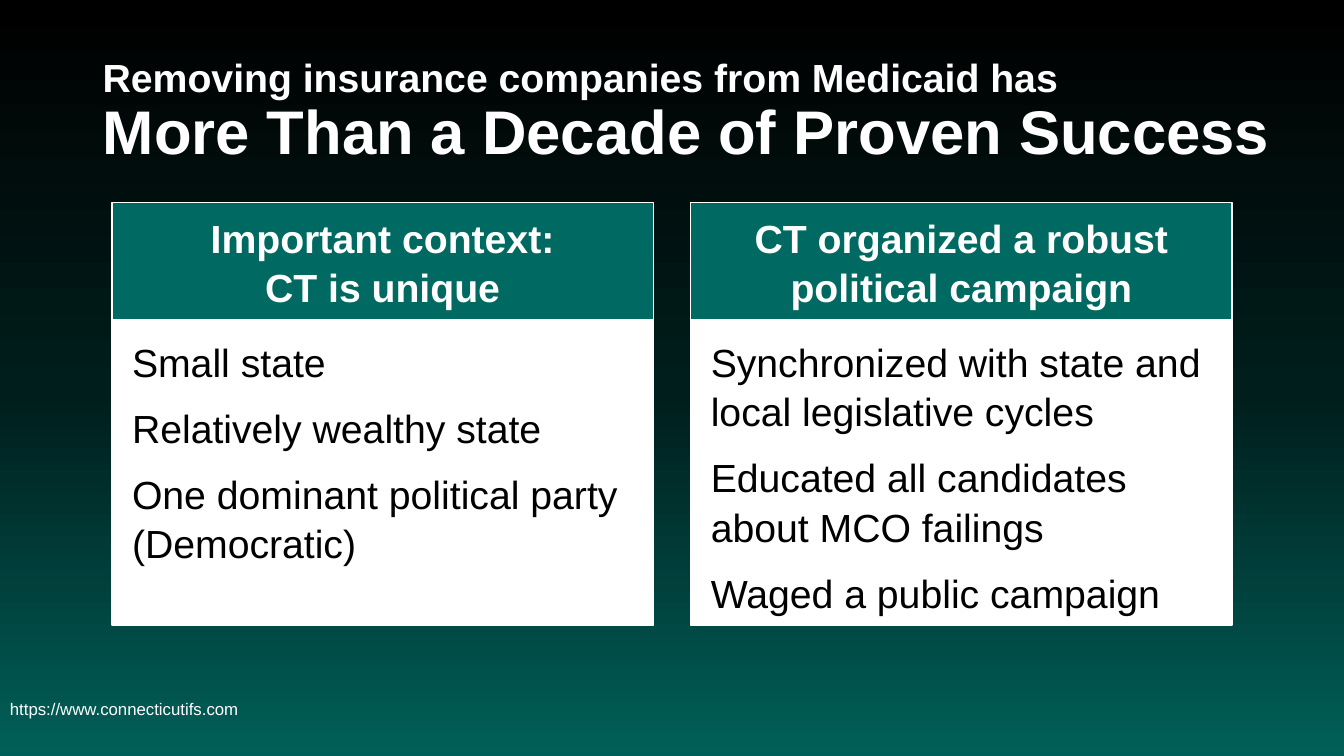
from copy import deepcopy
from dataclasses import dataclass
from typing import Any

from pptx import Presentation
from pptx.dml.color import RGBColor
from pptx.enum.shapes import MSO_SHAPE as SHAPE
from pptx.enum.text import MSO_ANCHOR as ANCHOR, PP_ALIGN as ALIGN
from pptx.oxml.ns import qn
from pptx.util import Inches, Pt

WHITE, BLACK, TEAL = "FFFFFF", "000000", "006961"
GRADIENT = [(0, BLACK), (0.52, "001E1C"), (1, "006059")]
LEFT, TOP, WIDTH, GAP = 1.11, 2.01, 5.37, 0.37
HEAD_H, BODY_H = 1.16, 3.03


@dataclass
class Line:
    text: str
    size: float = 28
    bold: bool = False
    color: str = WHITE


@dataclass
class Card:
    heading: list[str]
    points: list[str]


CARDS = [
    Card(["Important context:", "CT is unique"],
         ["Small state", "Relatively wealthy state",
          "One dominant political party (Democratic)"]),
    Card(["CT organized a robust political campaign"],
         ["Synchronized with state and local legislative cycles",
          "Educated all candidates about MCO failings",
          "Waged a public campaign"]),
]
TITLE = [Line("Removing insurance companies from Medicaid has", 28, True),
         Line("More Than a Decade of Proven Success", 44, True)]
PLAIN_FRAME = {"word_wrap": True, "vertical_anchor": ANCHOR.MIDDLE}
HEAD_FRAME = PLAIN_FRAME | {
    "margin_left": Inches(0.22), "margin_right": Inches(0.22),
    "margin_top": Inches(0.12), "margin_bottom": Inches(0.12)}
BODY_FRAME = {
    "word_wrap": True, "vertical_anchor": ANCHOR.TOP,
    "margin_left": Inches(0.2), "margin_right": Inches(0.22),
    "margin_top": Inches(0.16), "margin_bottom": Inches(0.24)}
PLAIN_PARA = {"alignment": ALIGN.LEFT, "line_spacing": 0.9}
HEAD_PARA = {"alignment": ALIGN.CENTER, "line_spacing": 1.05, "space_after": Pt(0.2)}
BODY_PARA = {"alignment": ALIGN.LEFT, "line_spacing": 1.05, "space_after": Pt(12)}


def rgb(color: str) -> RGBColor:
    return RGBColor.from_string(color)


def apply(target: Any, values: dict[str, Any]) -> None:
    for name, value in values.items():
        setattr(target, name, value)


def add_run(p: Any, line: Line) -> None:
    r = p.add_run()
    r.text = line.text
    apply(r.font, {"name": "Arial", "size": Pt(line.size), "bold": line.bold})
    r.font.color.rgb = rgb(line.color)


def write(sp: Any, paras: list[list[Line]], frame: dict[str, Any],
          para: dict[str, Any]) -> None:
    tf = sp.text_frame
    apply(tf, frame)
    for i, lines in enumerate(paras):
        p = tf.add_paragraph() if i else tf.paragraphs[0]
        apply(p, para)
        for j, line in enumerate(lines):
            if j:
                p.add_line_break()
            add_run(p, line)


def add_panel(s: Any, x: float, y: float, h: float, color: str) -> Any:
    sp = s.shapes.add_shape(SHAPE.RECTANGLE, Inches(x), Inches(y), Inches(WIDTH), Inches(h))
    sp.shadow.inherit = False
    sp.fill.solid()
    sp.fill.fore_color.rgb = rgb(color)
    sp.line.color.rgb = rgb(WHITE)
    sp.line.width = Pt(1)
    return sp


def add_card(s: Any, card: Card, x: float) -> None:
    head = add_panel(s, x, TOP, HEAD_H, TEAL)
    write(head, [[Line(t, bold=True)] for t in card.heading], HEAD_FRAME, HEAD_PARA)
    body = add_panel(s, x, TOP + HEAD_H, BODY_H, WHITE)
    write(body, [[Line(t, color=BLACK)] for t in card.points], BODY_FRAME, BODY_PARA)


def add_text(s: Any, x: float, y: float, w: float, h: float, lines: list[Line]) -> None:
    sp = s.shapes.add_textbox(Inches(x), Inches(y), Inches(w), Inches(h))
    write(sp, [lines], PLAIN_FRAME, PLAIN_PARA)


def paint_background(s: Any) -> None:
    fill = s.background.fill
    fill.gradient()
    fill.gradient_angle = 270
    stops = s.element.find(".//" + qn("a:gsLst"))
    stops.append(deepcopy(stops[0]))
    for stop, (position, color) in zip(fill.gradient_stops, GRADIENT):
        stop.position = position
        stop.color.rgb = rgb(color)


def main() -> None:
    prs = Presentation()
    prs.slide_width, prs.slide_height = Inches(13.33), Inches(7.5)
    s = prs.slides.add_slide(prs.slide_layouts[6])
    paint_background(s)
    add_text(s, 0.92, 0.4, 11.88, 1.45, TITLE)
    add_text(s, 0, 6.58, 9, 0.92, [Line("https://www.connecticutifs.com", 12)])
    for i, card in enumerate(CARDS):
        add_card(s, card, LEFT + i * (WIDTH + GAP))
    prs.save("out.pptx")


if __name__ == "__main__":
    main()
